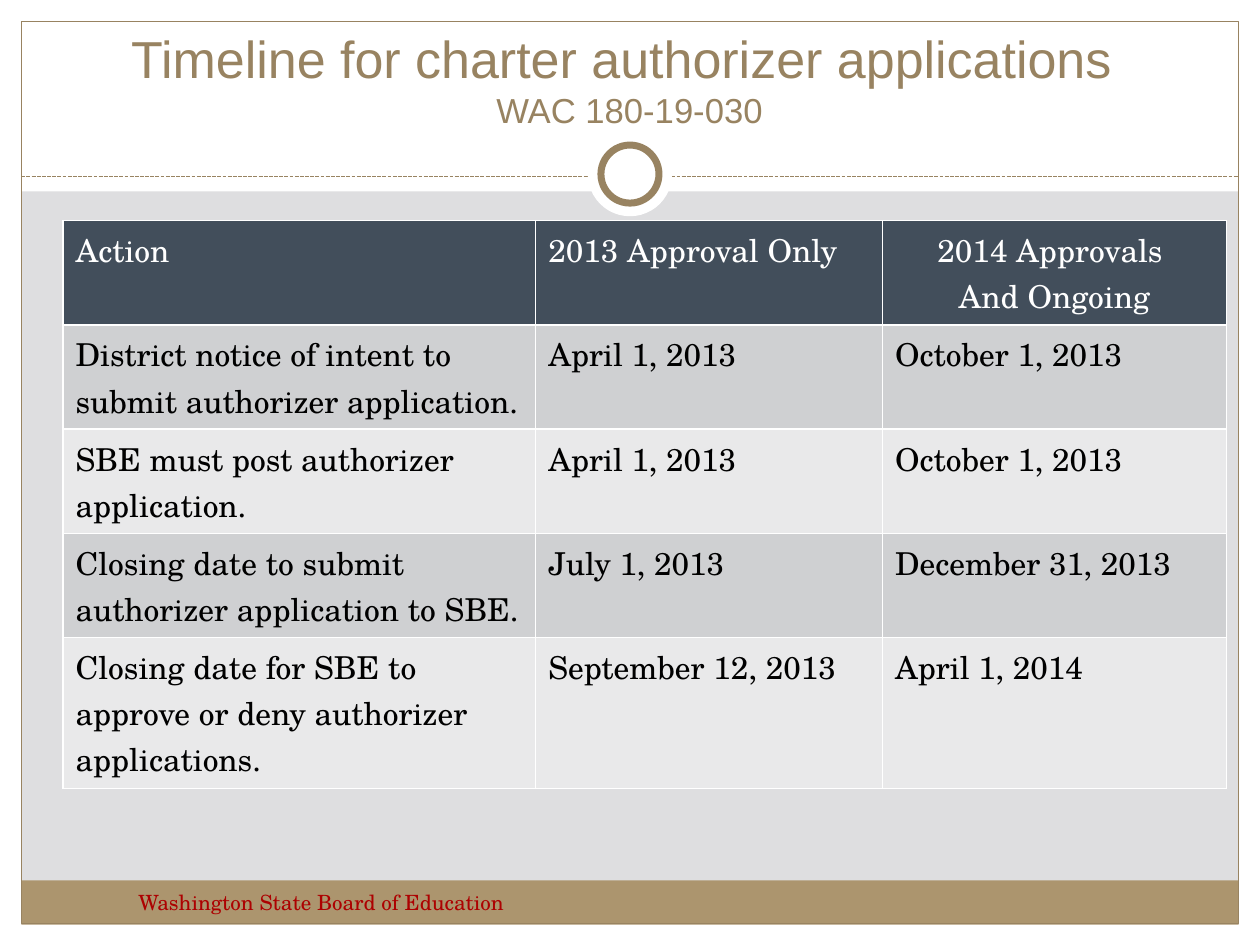
import pptx
import pptx.util
from pptx.dml.color import RGBColor
from pptx.enum.dml import MSO_LINE
from pptx.enum.shapes import MSO_CONNECTOR, MSO_SHAPE
from pptx.enum.text import MSO_ANCHOR, PP_ALIGN
from pptx.oxml.ns import qn
from lxml import etree

Cm, Pt = pptx.util.Cm, pptx.util.Pt

WHITE = RGBColor(0xFF, 0xFF, 0xFF)
BLACK = RGBColor(0, 0, 0)
BACKGROUND = RGBColor(0xDE, 0xDE, 0xE0)
BRONZE = RGBColor(0x98, 0x83, 0x61)
TAN = RGBColor(0xAC, 0x95, 0x6E)
RED = RGBColor(0xAD, 0x01, 0x01)
SLATE = RGBColor(0x42, 0x4E, 0x5B)
BANDS = (RGBColor(0xCF, 0xD0, 0xD2), RGBColor(0xE9, 0xE9, 0xEA))

WIDTH, HEIGHT, MARGIN = 25.4, 19.05, 0.43
RULE_Y = 3.56
RING_Y = 3.51

ROWS = [
    ("Action", "2013 Approval Only", "2014 Approvals \nAnd Ongoing"),
    ("District notice of intent to submit authorizer application.",
     "April 1, 2013", "October 1, 2013"),
    ("SBE must post authorizer application.", "April 1, 2013", "October 1, 2013"),
    ("Closing date to submit authorizer application to SBE.",
     "July 1, 2013", "December 31, 2013"),
    ("Closing date for SBE to approve or deny authorizer applications.",
     "September 12, 2013", "April 1, 2014"),
]


class SlideBuilder:
    heading_font = "Arial"
    body_font = "TeX Gyre Schola"

    def __init__(self, slide):
        self.slide = slide
        slide.background.fill.solid()
        slide.background.fill.fore_color.rgb = BACKGROUND

    def shape(self, preset, left, top, width, height, fill=None, line=None, weight=0.75):
        shape = self.slide.shapes.add_shape(
            preset, Cm(left), Cm(top), Cm(width), Cm(height))
        shape.shadow.inherit = False
        if fill is None:
            shape.fill.background()
        else:
            shape.fill.solid()
            shape.fill.fore_color.rgb = fill
        if line is None:
            shape.line.fill.background()
        else:
            shape.line.color.rgb = line
            shape.line.width = Pt(weight)
        return shape

    def circle(self, diameter, **style):
        """Draw a circle centred on the slide at the height of the ring."""
        return self.shape(MSO_SHAPE.OVAL, (WIDTH - diameter) / 2,
                          RING_Y - diameter / 2, diameter, diameter, **style)

    def dashed_rule(self, left, right, y):
        rule = self.slide.shapes.add_connector(
            MSO_CONNECTOR.STRAIGHT, Cm(left), Cm(y), Cm(right), Cm(y))
        rule.line.color.rgb = BRONZE
        rule.line.width = Pt(0.75)
        rule.line.dash_style = MSO_LINE.SQUARE_DOT
        etree.SubElement(rule._element.spPr, qn("a:effectLst"))

    def text_box(self, left, top, width, height, anchor=MSO_ANCHOR.TOP):
        frame = self.slide.shapes.add_textbox(
            Cm(left), Cm(top), Cm(width), Cm(height)).text_frame
        frame.word_wrap = True
        frame.vertical_anchor = anchor
        return frame

    def run(self, paragraph, text, size, color, font):
        run = paragraph.add_run()
        run.text = text
        run.font.name = font
        run.font.size = Pt(size)
        run.font.color.rgb = color

    def cell(self, cell, text, fill, color):
        cell.fill.solid()
        cell.fill.fore_color.rgb = fill
        lines = text.split("\n")
        for index, line in enumerate(lines):
            frame = cell.text_frame
            paragraph = frame.add_paragraph() if index else frame.paragraphs[0]
            if len(lines) > 1:
                paragraph.alignment = PP_ALIGN.CENTER
            self.run(paragraph, line, 18, color, self.body_font)
        self.cell_borders(cell)

    def cell_borders(self, cell):
        properties = cell._tc.get_or_add_tcPr()
        for index, side in enumerate(("lnL", "lnR", "lnT", "lnB")):
            border = etree.Element(qn("a:" + side), w=str(Pt(1)))
            fill = etree.SubElement(border, qn("a:solidFill"))
            etree.SubElement(fill, qn("a:srgbClr"), val=str(WHITE))
            properties.insert(index, border)

    def table(self, rows, left, top, column_widths, row_heights):
        table = self.slide.shapes.add_table(
            len(rows), len(column_widths), Cm(left), Cm(top),
            Cm(sum(column_widths)), Cm(sum(row_heights))).table
        table.horz_banding = False
        for column, width in zip(table.columns, column_widths):
            column.width = Cm(width)
        for index, (row, height) in enumerate(zip(table.rows, row_heights)):
            row.height = Cm(height)
            fill, color = (BANDS[(index - 1) % 2], BLACK) if index else (SLATE, WHITE)
            for cell, text in zip(row.cells, rows[index]):
                self.cell(cell, text, fill, color)


def main():
    presentation = pptx.Presentation()
    presentation.slide_width = Cm(WIDTH)
    presentation.slide_height = Cm(HEIGHT)
    builder = SlideBuilder(
        presentation.slides.add_slide(presentation.slide_layouts[6]))

    rectangle = MSO_SHAPE.RECTANGLE
    inner_width = WIDTH - 2 * MARGIN
    white_bands = [
        (0, HEIGHT - MARGIN, WIDTH, MARGIN),
        (0, 0, WIDTH, 3.86),
        (0, 0, MARGIN, HEIGHT),
        (WIDTH - MARGIN, 0, MARGIN, HEIGHT),
    ]
    for band in white_bands:
        builder.shape(rectangle, *band, fill=WHITE)
    builder.shape(rectangle, MARGIN, 17.75, inner_width, 0.89, fill=TAN)
    builder.shape(rectangle, MARGIN, MARGIN, inner_width, HEIGHT - 2 * MARGIN, line=BRONZE)
    builder.dashed_rule(MARGIN, WIDTH - MARGIN, RULE_Y)
    builder.circle(1.7, fill=WHITE)
    builder.circle(1.17, fill=WHITE, line=BRONZE, weight=4)

    title = builder.text_box(0.84, 0.64, 23.7, 2.11, MSO_ANCHOR.BOTTOM).paragraphs[0]
    title.alignment = PP_ALIGN.CENTER
    builder.run(title, "Timeline for charter authorizer applications ", 29.7,
                BRONZE, builder.heading_font)
    title.add_line_break()
    builder.run(title, "WAC 180-19-030", 19.8, BRONZE, builder.heading_font)

    footer = builder.text_box(2.54, 17.81, 9.96, 1.02).paragraphs[0]
    builder.run(footer, "Washington State Board of Education", 12, RED, builder.body_font)

    builder.table(ROWS, 1.27, 4.45, (9.53, 6.99, 6.93), [2.1] * 4 + [3.05])
    presentation.save("out.pptx")


if __name__ == "__main__":
    main()
